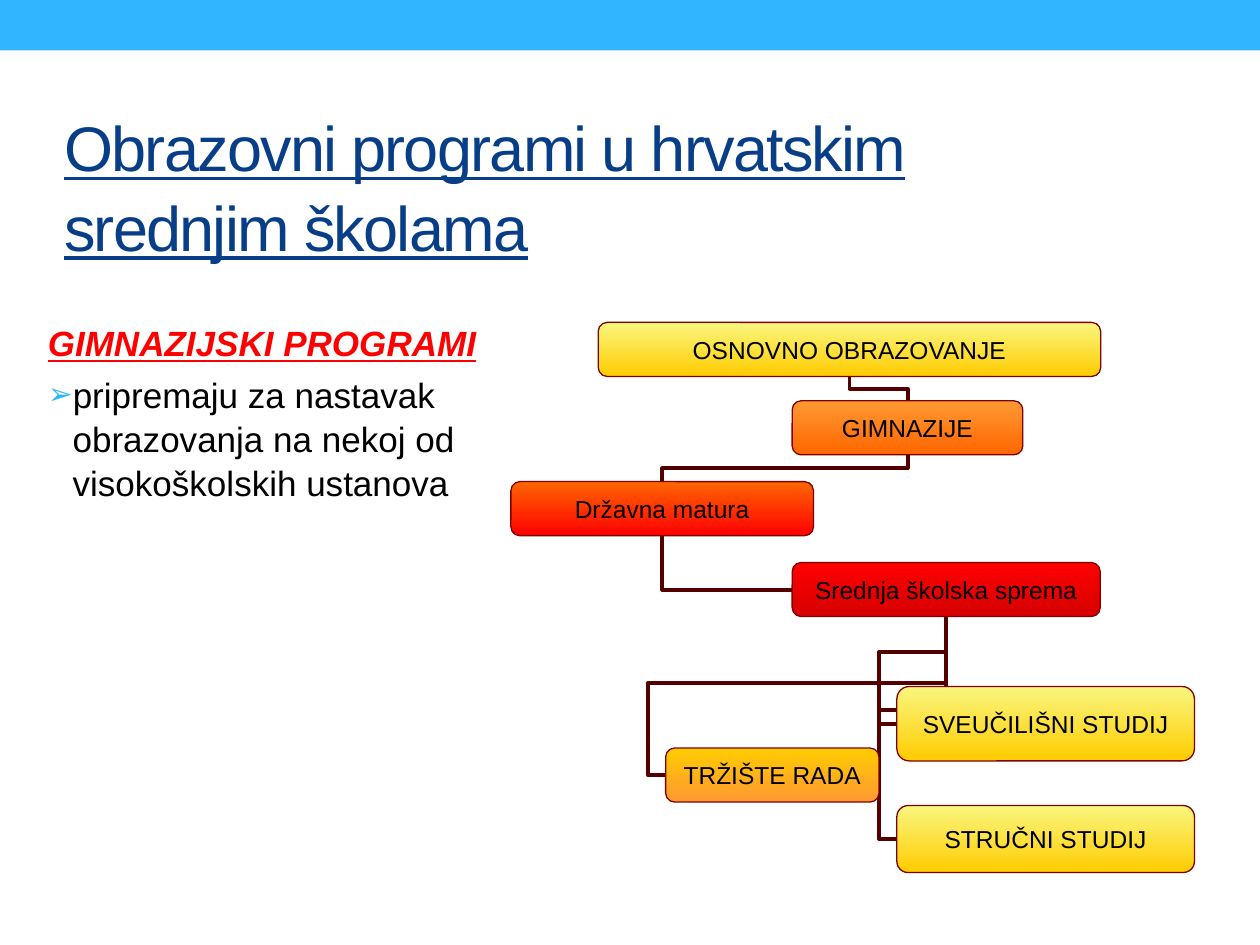
"""Builds the slide on grammar-school programmes and the paths that follow them."""
from dataclasses import dataclass

from lxml.etree import SubElement
from pptx import Presentation
from pptx.dml.color import RGBColor
from pptx.enum.shapes import MSO_CONNECTOR as Connector, MSO_SHAPE as Preset
from pptx.enum.text import MSO_ANCHOR as Anchor, MSO_AUTO_SIZE as AutoSize, PP_ALIGN as Align
from pptx.oxml.ns import qn
from pptx.util import Cm, Pt


@dataclass(frozen=True)
class Theme:
    """Colours, font and type sizes of the slide."""
    font: str = "Arial"
    accent: str = "31B6FD"
    title: str = "073E87"
    heading: str = "FF0000"
    text: str = "000000"
    outline: str = "800000"
    link: str = "540000"
    title_size: int = 36
    body_size: int = 20
    box_size: int = 14
    line_spacing: float = 1.05


THEME = Theme()
YELLOW = ("F9F67F", "FFCC00")
TITLE = "Obrazovni programi u hrvatskim srednjim školama"
HEADING = "GIMNAZIJSKI PROGRAMI"
BULLET = "pripremaju za nastavak obrazovanja na nekoj od visokoškolskih ustanova"

BOXES = {
    "primary": ("OSNOVNO OBRAZOVANJE", (12.06, 6.5, 10.13, 1.09), YELLOW),
    "grammar": ("GIMNAZIJE", (15.97, 8.08, 4.65, 1.09), ("FF9933", "FF6600")),
    "exam": ("Državna matura", (10.3, 9.71, 6.1, 1.09), ("FF6600", "FF0000")),
    "diploma": ("Srednja školska sprema", (15.97, 11.34, 6.21, 1.09), ("FF0000", "D60000")),
    "university": ("SVEUČILIŠNI STUDIJ", (18.08, 13.84, 6, 1.5), YELLOW),
    "vocational": ("STRUČNI STUDIJ", (18.08, 16.24, 6, 1.35), YELLOW),
    "market": ("TRŽIŠTE RADA", (13.42, 15.08, 4.3, 1.09), ("FFCC00", "FF9933")),
}

TOP, LEFT, BOTTOM = 0, 1, 2
STUB = 0.36
LINKS = [
    ("market", LEFT, "diploma", BOTTOM, "bentConnector4", 180, "flipH", 0.58),
    ("vocational", LEFT, "diploma", BOTTOM, "bentConnector4", 180, "flipH", 0.58),
    ("university", LEFT, "diploma", BOTTOM, "bentConnector4", 180, "flipH", 0.67),
    ("diploma", LEFT, "exam", BOTTOM, "bentConnector2", 180, None, None),
    ("exam", TOP, "grammar", BOTTOM, "bentConnector3", 270, None, 0.5),
    ("grammar", TOP, "primary", BOTTOM, "bentConnector3", 270, "flipV", 0.5),
]


def color(value):
    return RGBColor.from_string(value)


def place(shape, left, top, width, height):
    shape.left, shape.top, shape.width, shape.height = map(Cm, (left, top, width, height))


def write(paragraph, text, size, ink=THEME.text, align=Align.LEFT, bold=False,
          italic=False, underline=False, tracking=None, spacing=None, before=0):
    paragraph.alignment = align
    paragraph.line_spacing = spacing
    paragraph.space_before = Pt(before)
    run = paragraph.add_run()
    run.text = text
    font = run.font
    font.name, font.size, font.color.rgb = THEME.font, Pt(size), color(ink)
    font.bold, font.italic, font.underline = bold, italic, underline
    if tracking is not None:
        run._r.get_or_add_rPr().set("spc", str(round(tracking * 100)))


def set_bullet(paragraph, character=None):
    properties = paragraph._p.get_or_add_pPr()
    properties.set("marL", str(Cm(0.5)))
    properties.set("indent", str(-Cm(0.5)))
    if character is None:
        SubElement(properties, qn("a:buNone"))
        return
    SubElement(SubElement(properties, qn("a:buClr")), qn("a:srgbClr"), val=THEME.accent)
    SubElement(properties, qn("a:buSzPct"), val="85000")
    SubElement(properties, qn("a:buFont"), typeface=THEME.font)
    SubElement(properties, qn("a:buChar"), char=character)


def add_band(slide, width):
    band = slide.shapes.add_shape(Preset.RECTANGLE, 0, 0, width, Cm(1.02))
    band.shadow.inherit = False
    band.fill.solid()
    band.fill.fore_color.rgb = color(THEME.accent)
    band.line.fill.background()


def fill_placeholders(slide):
    title, body = slide.shapes.title, slide.placeholders[1]
    place(title, 1.04, 2.13, 22.02, 3.18)
    place(body, 0.71, 6.32, 9.19, 10.34)
    for shape, anchor in ((title, Anchor.MIDDLE), (body, Anchor.TOP)):
        frame = shape.text_frame
        frame.word_wrap, frame.auto_size, frame.vertical_anchor = True, AutoSize.NONE, anchor
    write(title.text_frame.paragraphs[0], TITLE, THEME.title_size, ink=THEME.title,
          underline=True, tracking=-1, spacing=THEME.line_spacing)
    heading = body.text_frame.paragraphs[0]
    write(heading, HEADING, THEME.body_size, ink=THEME.heading, bold=True, italic=True,
          underline=True, spacing=THEME.line_spacing, before=4)
    set_bullet(heading)
    item = body.text_frame.add_paragraph()
    write(item, BULLET, THEME.body_size, spacing=THEME.line_spacing, before=4)
    set_bullet(item, "➢")


def add_box(slide, text, bounds, gradient):
    box = slide.shapes.add_shape(Preset.ROUNDED_RECTANGLE, *map(Cm, bounds))
    box.shadow.inherit = False
    box.fill.gradient()
    box.fill.gradient_angle = 270
    for stop, value in zip(box.fill.gradient_stops, gradient):
        stop.color.rgb = color(value)
    box.line.color.rgb, box.line.width = color(THEME.outline), Pt(0.75)
    frame = box.text_frame
    frame.word_wrap, frame.vertical_anchor = False, Anchor.MIDDLE
    frame.margin_left = frame.margin_right = Cm(0.15)
    frame.margin_top = frame.margin_bottom = Cm(0.08)
    write(frame.paragraphs[0], text, THEME.box_size, align=Align.CENTER)
    return box


def add_link(slide, start, start_side, end, end_side, preset, turn, flip, bend):
    link = slide.shapes.add_connector(Connector.ELBOW, 0, 0, 0, 0)
    link.begin_connect(start, start_side)
    link.end_connect(end, end_side)
    link.line.color.rgb, link.line.width = color(THEME.link), Pt(2.25)
    left, right = sorted((link.begin_x, link.end_x))
    top, bottom = sorted((link.begin_y, link.end_y))
    width, height = right - left, bottom - top
    if turn == 270:
        width, height = height, width
    properties = link._element.spPr
    transform = properties.find(qn("a:xfrm"))
    transform.attrib.clear()
    transform.set("rot", str(turn * 60000))
    if flip:
        transform.set(flip, "1")
    link.left, link.top = (left + right - width) // 2, (top + bottom - height) // 2
    link.width, link.height = width, height
    geometry = properties.find(qn("a:prstGeom"))
    geometry.set("prst", preset)
    bends = {"bentConnector2": [], "bentConnector3": [bend],
             "bentConnector4": [-Cm(STUB) / width, bend]}[preset]
    adjustments = geometry.find(qn("a:avLst"))
    for number, value in enumerate(bends, 1):
        SubElement(adjustments, qn("a:gd"), name=f"adj{number}",
                   fmla=f"val {round(value * 100000)}")
    SubElement(properties, qn("a:effectLst"))
    slide.shapes._spTree.insert(2, link._element)


def main():
    presentation = Presentation()
    presentation.slide_width, presentation.slide_height = Cm(25.4), Cm(19.05)
    slide = presentation.slides.add_slide(presentation.slide_layouts[1])
    add_band(slide, presentation.slide_width)
    fill_placeholders(slide)
    boxes = {name: add_box(slide, *content) for name, content in BOXES.items()}
    for start, start_side, end, end_side, *route in LINKS:
        add_link(slide, boxes[start], start_side, boxes[end], end_side, *route)
    presentation.save("out.pptx")


if __name__ == "__main__":
    main()
